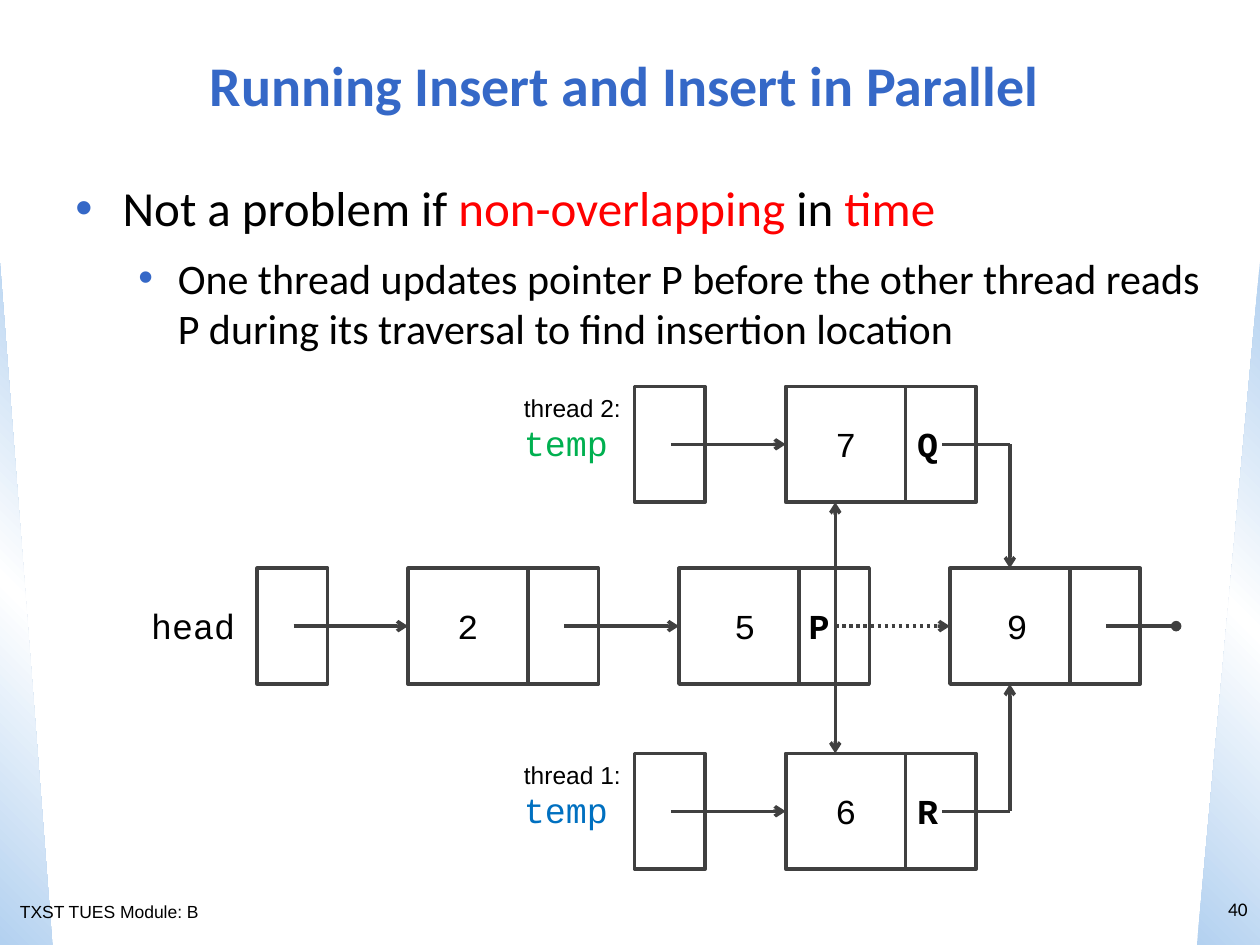
"""Build the slide on two list insertions running in parallel."""
from dataclasses import dataclass

from lxml.etree import SubElement
from pptx import Presentation
from pptx.dml.color import RGBColor
from pptx.enum.dml import MSO_LINE
from pptx.enum.shapes import MSO_CONNECTOR, MSO_SHAPE
from pptx.enum.text import MSO_ANCHOR, PP_ALIGN
from pptx.oxml import parse_xml
from pptx.oxml.ns import nsdecls, qn
from pptx.util import Pt


@dataclass(frozen=True)
class Theme:
    accent: str = "3568C7"
    text: str = "000000"
    alert: str = "FF0000"
    line: str = "404040"
    edge: str = "B3D1F0"
    paper: str = "FFFFFF"
    thread1: str = "0070C0"
    thread2: str = "00B050"
    head_font: str = "Calibri"
    label_font: str = "Arial"
    code_font: str = "Courier New"
    title_size: int = 32
    body_size: int = 28
    sub_size: int = 24
    code_size: int = 20
    label_size: int = 14
    number_size: int = 11
    footer_size: int = 10


theme = Theme()
prs = Presentation()
prs.slide_width, prs.slide_height = Pt(720), Pt(540)
s = prs.slides.add_slide(prs.slide_layouts[5])


def add_text(x, y, w, h, lines, wrap=False):
    """Add a text box; each line is (text, font, size, colour, bold)."""
    sp = s.shapes.add_textbox(Pt(x), Pt(y), Pt(w), Pt(h))
    tf = sp.text_frame
    tf.word_wrap = wrap
    tf.text = "\n".join(line[0] for line in lines)
    for p, (_, font, size, color, bold) in zip(tf.paragraphs, lines):
        f = p.runs[0].font
        f.name, f.size, f.bold = font, Pt(size), bold
        f.color.rgb = RGBColor.from_string(color)
    return tf


def add_line(x1, y1, x2, y2, end=None, site=None, tip="arrow", dotted=False):
    """Add a connector, joined to a side of the end shape if one is given."""
    c = s.shapes.add_connector(MSO_CONNECTOR.STRAIGHT, Pt(x1), Pt(y1), Pt(x2), Pt(y2))
    if end is not None:
        c.end_connect(end, site)
    c.line.color.rgb = RGBColor.from_string(theme.line)
    c.line.width = Pt(2)
    if dotted:
        c.line.dash_style = MSO_LINE.ROUND_DOT
    if tip:
        SubElement(c.line._get_or_add_ln(), qn("a:tailEnd"), type=tip)
    SubElement(c._element.spPr, qn("a:effectLst"))


for x, w, angle in [(0, 30, 315), (684, 36, 45)]:
    sp = s.shapes.add_shape(MSO_SHAPE.RIGHT_TRIANGLE, Pt(x), Pt(150), Pt(w), Pt(390))
    sp.shadow.inherit = False
    sp.line.fill.background()
    stops = "".join(
        f'<a:gs pos="{pos}"><a:srgbClr val="{color}"/></a:gs>'
        for pos, color in [(0, theme.edge), (50000, theme.paper), (100000, theme.edge)])
    sp._element.spPr.find(qn("a:prstGeom")).addnext(parse_xml(
        f'<a:gradFill {nsdecls("a")} rotWithShape="1"><a:gsLst>{stops}</a:gsLst>'
        f'<a:lin ang="{angle * 60000}" scaled="0"/></a:gradFill>'))
    if x:
        sp._element.spPr.find(qn("a:xfrm")).set("flipH", "1")

title = s.shapes.title
title.left, title.top, title.width, title.height = Pt(18), Pt(18), Pt(678), Pt(60)
tf = title.text_frame
tf.text = "Running Insert and Insert in Parallel"
tf.vertical_anchor = MSO_ANCHOR.MIDDLE
p = tf.paragraphs[0]
p.alignment = PP_ALIGN.CENTER
f = p.runs[0].font
f.name, f.size, f.bold = theme.head_font, Pt(theme.title_size), True
f.color.rgb = RGBColor.from_string(theme.accent)

body = [
    (0, 27, 27, theme.body_size, [
        ("Not a problem if ", theme.text), ("non-overlapping ", theme.alert),
        ("in ", theme.text), ("time", theme.alert)]),
    (1, 58.5, 22.5, theme.sub_size, [
        ("One thread updates pointer P before the other thread reads P "
         "during its traversal to find insertion location", theme.text)]),
]
tf = s.shapes.add_textbox(Pt(36), Pt(98), Pt(660), Pt(110)).text_frame
tf.word_wrap = True
for level, margin, hang, size, runs in body:
    p = tf.add_paragraph() if level else tf.paragraphs[0]
    p.level = level
    pPr = p._p.get_or_add_pPr()
    pPr.set("marL", str(Pt(margin)))
    pPr.set("indent", str(-Pt(hang)))
    SubElement(SubElement(pPr, qn("a:buClr")), qn("a:srgbClr"), val=theme.accent)
    SubElement(pPr, qn("a:buFont"), typeface=theme.label_font)
    SubElement(pPr, qn("a:buChar"), char="•")
    if level:
        p.space_before = Pt(9)
    for text, color in runs:
        r = p.add_run()
        r.text = text
        r.font.name, r.font.size = theme.head_font, Pt(size)
        r.font.color.rgb = RGBColor.from_string(color)

box_h, value_w, link_w, pitch = 66.2, 68.5, 40.3, 154.8
first_x, link_mid, mid = 233.2, 20.8, 33.1
top_y, list_y, low_y = 220.8, 324.7, 430.5
upper_x = 449
cells = {}
for name, x, y, w in [
    ("head", 147, list_y, link_w),
    *[(f"value {i}", first_x + i * pitch, list_y, value_w) for i in range(3)],
    *[(f"link {i}", first_x + i * pitch + value_w, list_y, link_w) for i in range(3)],
    *[(f"{part} {row}", x, y, w)
      for row, y in [("top", top_y), ("low", low_y)]
      for part, x, w in [("temp", 362.6, link_w), ("value", upper_x, value_w),
                         ("link", upper_x + value_w, link_w)]],
]:
    sp = s.shapes.add_shape(MSO_SHAPE.RECTANGLE, Pt(x), Pt(y), Pt(w), Pt(box_h))
    sp.shadow.inherit = False
    sp.fill.background()
    sp.line.color.rgb = RGBColor.from_string(theme.line)
    sp.line.width = Pt(2)
    cells[name] = sp

for start, end in [("head", "value 0"), ("link 0", "value 1"), ("link 1", "value 2"),
                   ("temp top", "value top"), ("temp low", "value low")]:
    a, b = cells[start], cells[end]
    y = b.top.pt + mid
    add_line(a.left.pt + link_mid, y, b.left.pt, y, b, 1, dotted=start == "link 1")

tail_x = cells["link 2"].left.pt + link_mid
add_line(tail_x, list_y + mid, tail_x + 40, list_y + mid, tip="oval")

p_x = cells["link 1"].left.pt + link_mid
nine = cells["value 2"]
nine_x = nine.left.pt + value_w / 2
for row_y, near_y, list_side, site in [(top_y, top_y + box_h, list_y, 0),
                                       (low_y, low_y, list_y + box_h, 2)]:
    add_line(p_x, list_y + mid, p_x, near_y)
    link_x = upper_x + value_w + link_mid
    add_line(link_x, row_y + mid, nine_x, row_y + mid, tip=None)
    add_line(nine_x, row_y + mid, nine_x, list_side, nine, site)

for text, x, y, bold in [
    ("head", 79.2, list_y, False), ("2", 254.2, list_y, False),
    ("5", 412.6, list_y, False), ("9", 568.1, list_y, False),
    ("7", 470.2, top_y, False), ("6", 470.2, low_y, False),
    ("P", 455, list_y, True), ("Q", 517, top_y, True), ("R", 517, low_y, True),
]:
    add_text(x, y + 17, 14.4 + 12 * len(text), 31.7,
             [(text, theme.code_font, theme.code_size, theme.text, bold)])

for number, y, color in [(2, top_y, theme.thread2), (1, low_y, theme.thread1)]:
    add_text(292.3, y, 69.8, 48.2, [
        (f"thread {number}:", theme.label_font, theme.label_size, theme.text, False),
        ("temp", theme.code_font, theme.code_size, color, False)])

add_text(4.3, 511.2, 126, 19.4,
         [("TXST TUES Module: B", theme.label_font, theme.footer_size, theme.text, False)],
         wrap=True)
tf = add_text(684, 498.2, 36, 41.8,
              [("40", theme.head_font, theme.number_size, theme.text, False)], wrap=True)
tf.vertical_anchor = MSO_ANCHOR.MIDDLE
tf.paragraphs[0].alignment = PP_ALIGN.RIGHT

prs.save("out.pptx")
